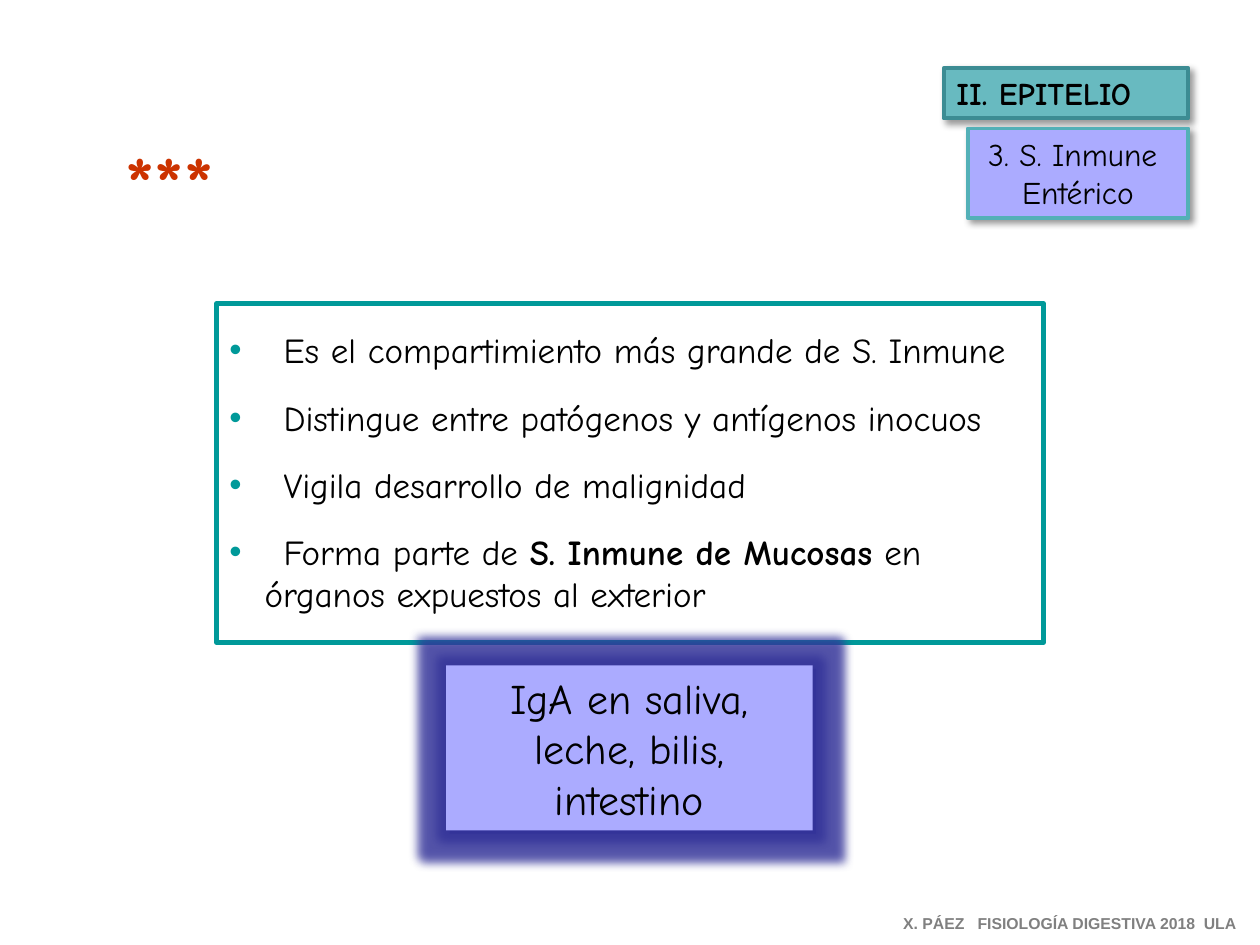
from lxml.etree import SubElement
from pptx import Presentation
from pptx.dml.color import RGBColor
from pptx.enum.shapes import MSO_SHAPE
from pptx.enum.text import MSO_ANCHOR, MSO_AUTO_SIZE, PP_ALIGN
from pptx.oxml import parse_xml
from pptx.oxml.ns import nsdecls, qn
from pptx.util import Inches, Pt

BLACK = RGBColor(0x00, 0x00, 0x00)
GRAY = RGBColor(0x80, 0x80, 0x80)
TEAL = RGBColor(0x00, 0x99, 0x99)
TEAL_FILL = RGBColor(0x68, 0xBA, 0xC0)
TEAL_DARK = RGBColor(0x3C, 0x8C, 0x93)
TEAL_MEDIUM = RGBColor(0x53, 0xB0, 0xB7)
LILAC = RGBColor(0xAB, 0xAB, 0xFF)
INDIGO = RGBColor(0x33, 0x33, 0x99)
RED = RGBColor(0xCC, 0x33, 0x00)

HAND_FONT = "Comic Neue"
RIGHT_EDGE = 9.43
LIST_ITEMS = [
    [("Es el compartimiento más grande de S. Inmune", False)],
    [("Distingue entre patógenos y antígenos inocuos", False)],
    [("Vigila desarrollo de malignidad", False)],
    [("Forma parte de ", False), ("S. Inmune de Mucosas", True), (" en", False)],
]
LIST_CONTINUATION = "órganos expuestos al exterior"


def place(shape, left, top, width, height):
    shape.left, shape.top = Inches(left), Inches(top)
    shape.width, shape.height = Inches(width), Inches(height)


def style_run(run, size, color=BLACK, bold=False, font=HAND_FONT):
    run.font.name, run.font.size, run.font.bold = font, Pt(size), bold
    run.font.color.rgb = color


def write(shape, text, size, align=PP_ALIGN.LEFT, wrap=True, **style):
    frame = shape.text_frame
    frame.text = text
    frame.word_wrap = wrap
    frame.auto_size = MSO_AUTO_SIZE.NONE
    for paragraph in frame.paragraphs:
        paragraph.alignment = align
        for run in paragraph.runs:
            style_run(run, size, **style)


def add_color(parent, color, alpha):
    tint = SubElement(parent, qn("a:srgbClr"), val=str(color))
    SubElement(tint, qn("a:alpha"), val=str(alpha * 1000))


def add_shadow(effects, color, alpha, blur, distance):
    shadow = SubElement(effects, qn("a:outerShdw"), blurRad=str(Pt(blur)),
                        dist=str(Pt(distance)), dir=str(45 * 60000),
                        algn="tl", rotWithShape="0")
    add_color(shadow, color, alpha)


def clear_effects(shape):
    """Drop the theme's shadow and return the empty effect list."""
    shape.shadow.inherit = False
    return shape.element.spPr.find(qn("a:effectLst"))


def paint_label(label, fill, border):
    label.fill.solid()
    label.fill.fore_color.rgb = fill
    label.line.color.rgb = border
    label.line.width = Pt(2.25)
    label.text_frame.vertical_anchor = MSO_ANCHOR.MIDDLE
    add_shadow(clear_effects(label), BLACK, 40, 4, 3)


def add_text(slide, box, text, size, **style):
    text_box = slide.shapes.add_textbox(*map(Inches, box))
    write(text_box, text, size, **style)
    return text_box


def add_box(slide, box, text, size):
    rectangle = slide.shapes.add_shape(MSO_SHAPE.RECTANGLE, *map(Inches, box))
    write(rectangle, text, size, align=PP_ALIGN.CENTER)
    rectangle.text_frame.vertical_anchor = MSO_ANCHOR.MIDDLE
    return rectangle


def set_bullet(paragraph, margin, color=None):
    """Hang a coloured bullet, or only indent the line if no colour is given."""
    properties = paragraph._p.get_or_add_pPr()
    properties.set("marL", str(Inches(margin)))
    properties.set("indent", str(Inches(-margin) if color else 0))
    if color is None:
        SubElement(properties, qn("a:buNone"))
        return
    properties.append(parse_xml(
        f'<a:buClr {nsdecls("a")}><a:srgbClr val="{color}"/></a:buClr>'))
    SubElement(properties, qn("a:buFont"), typeface="Arial")
    SubElement(properties, qn("a:buChar"), char="•")


def fill_list(body):
    place(body, 1.72, 2.41, 6.56, 2.69)
    body.line.color.rgb = TEAL
    body.line.width = Pt(3)
    frame = body.text_frame
    frame.word_wrap = True
    frame.auto_size = MSO_AUTO_SIZE.NONE
    frame.vertical_anchor = MSO_ANCHOR.TOP
    frame.margin_top = Inches(0.2)
    lines = LIST_ITEMS + [[(LIST_CONTINUATION, False)]]
    for index, parts in enumerate(lines):
        paragraph = frame.add_paragraph() if index else frame.paragraphs[0]
        is_item = index < len(LIST_ITEMS)
        paragraph.space_before = Pt(14.4 if index and is_item else 0)
        set_bullet(paragraph, *((0.43, TEAL) if is_item else (0.28,)))
        for text, bold in parts:
            run = paragraph.add_run()
            run.text = text
            style_run(run, 20, bold=bold)


def add_stars(slide):
    stars = add_text(slide, (0.9, 1.02, 1.31, 0.84), "***", 44, color=RED, bold=True)
    properties = stars.text_frame.paragraphs[0].runs[0].font._element
    effects = parse_xml(f'<a:effectLst {nsdecls("a")}/>')
    add_shadow(effects, BLACK, 100, 0, 3)
    properties.find(qn("a:solidFill")).addnext(effects)


def add_antibody_box(slide):
    antibody = add_box(slide, (3.54, 5.28, 2.91, 1.31),
                       "IgA en saliva, leche, bilis, intestino", 24)
    antibody.fill.solid()
    antibody.fill.fore_color.rgb = LILAC
    antibody.line.fill.background()
    effects = clear_effects(antibody)
    glow = SubElement(effects, qn("a:glow"), rad=str(Pt(11)))
    add_color(glow, INDIGO, 60)
    add_shadow(effects, INDIGO, 100, 0, 2.8)


def main():
    presentation = Presentation()
    presentation.slide_width, presentation.slide_height = Inches(10), Inches(7.5)
    slide = presentation.slides.add_slide(presentation.slide_layouts[1])

    fill_list(slide.placeholders[1])
    add_antibody_box(slide)
    add_stars(slide)

    chapter = slide.shapes.title
    place(chapter, RIGHT_EDGE - 1.94, 0.54, 1.94, 0.4)
    write(chapter, "II. EPITELIO", 18, bold=True)
    paint_label(chapter, TEAL_FILL, TEAL_DARK)

    section = add_box(slide, (RIGHT_EDGE - 1.75, 1.02, 1.75, 0.71),
                      "3. S. Inmune \nEntérico", 18)
    paint_label(section, LILAC, TEAL_MEDIUM)

    add_text(slide, (7.07, 7.2, 2.9, 0.25), "X. PÁEZ   FISIOLOGÍA DIGESTIVA 2018  ULA",
             9, wrap=False, color=GRAY, bold=True, font="Arial")
    presentation.save("out.pptx")


if __name__ == "__main__":
    main()
